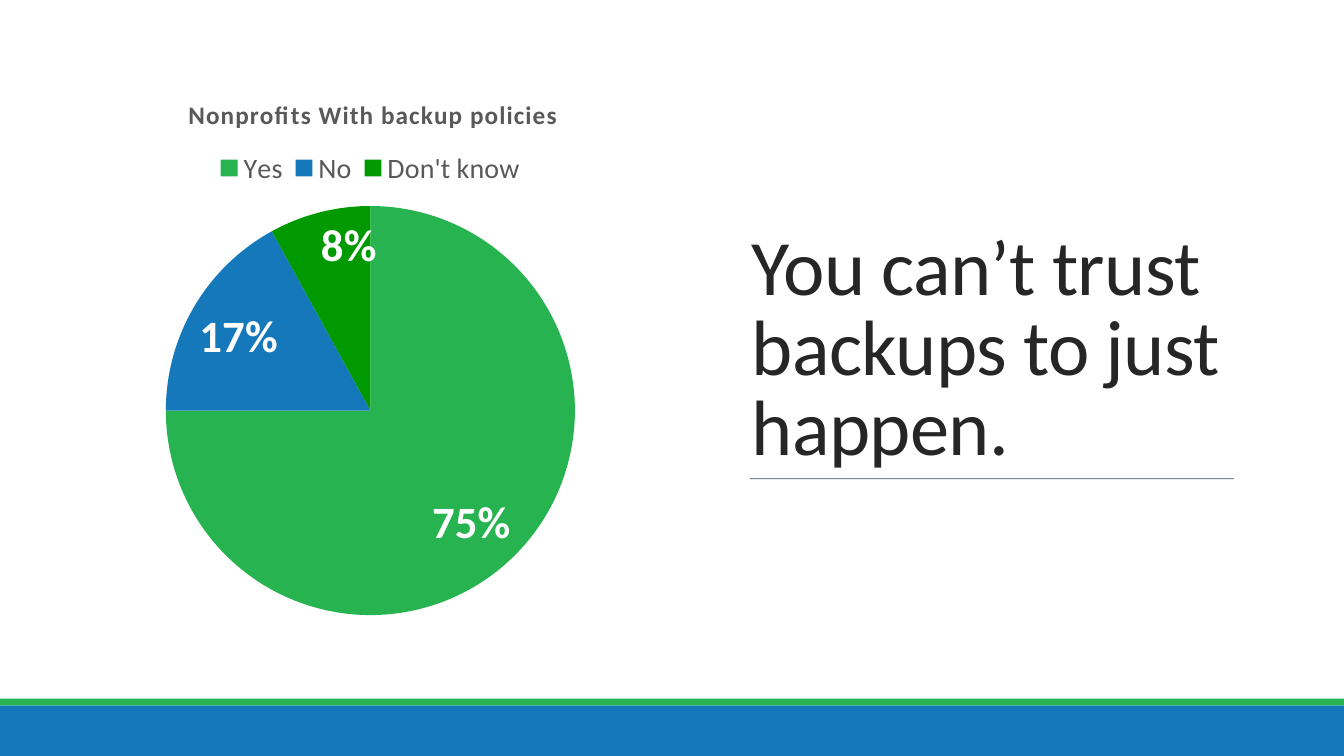
"""Build the slide on nonprofit backup policies: a pie chart beside a statement."""
from lxml import etree
from pptx import Presentation
from pptx import util as u
from pptx.chart import data
from pptx.dml.color import RGBColor
from pptx.enum import chart as ch, shapes, text
from pptx.oxml import ns

WHITE = RGBColor(0xFF, 0xFF, 0xFF)
GREEN = RGBColor(0x27, 0xB3, 0x50)
BLUE = RGBColor(0x15, 0x78, 0xBB)
DARK_GREEN = RGBColor(0x00, 0x99, 0x00)
INK = RGBColor(0x26, 0x26, 0x26)
GREY = RGBColor(0x59, 0x59, 0x59)
RULE = RGBColor(0x2C, 0x3C, 0x43)
FONT = "Calibri"
WIDTH, HEIGHT = 960, 540

STATEMENT = "You can’t trust backups to just happen."
CHART_TITLE = "Nonprofits With backup policies"
ANSWERS = [("Yes", 75, GREEN), ("No", 17, BLUE), ("Don't know", 8, DARK_GREEN)]
BANDS = [(499, WHITE), (5, GREEN), (36, BLUE)]
TITLE_AT = {"x": 0.19, "y": 0.04}
LEGEND_AT = {"x": 0.23, "y": 0.14, "w": 0.54, "h": 0.07}
PIE_AT = {"x": 0.16, "y": 0.24, "w": 0.68, "h": 0.74}


def style(font, size, color, bold=False):
    font.name, font.size, font.bold = FONT, u.Pt(size), bold
    font.color.rgb = color


def place(element, after, inner=False, **box):
    for old in element.findall(ns.qn("c:layout")):
        element.remove(old)
    layout = etree.Element(ns.qn("c:layout"))
    manual = etree.SubElement(layout, ns.qn("c:manualLayout"))
    entries = [("layoutTarget", "inner")] if inner else []
    entries += [(f"{k}Mode", "edge") for k in "xy"] + list(box.items())
    for name, value in entries:
        etree.SubElement(manual, ns.qn(f"c:{name}")).set("val", str(value))
    if after is None:
        element.insert(0, layout)
    else:
        element.find(ns.qn(after)).addnext(layout)


def add_bands(s):
    top = 0
    for height, color in BANDS:
        sp = s.shapes.add_shape(shapes.MSO_SHAPE.RECTANGLE, 0, u.Pt(top),
                                u.Pt(WIDTH), u.Pt(height))
        sp.shadow.inherit = False
        sp.fill.solid()
        sp.fill.fore_color.rgb = color
        sp.line.fill.background()
        top += height


def add_statement(s):
    sp = s.shapes.add_textbox(u.Pt(530), u.Pt(50.4), u.Pt(378.7), u.Pt(290))
    tf = sp.text_frame
    tf.word_wrap = True
    tf.vertical_anchor = text.MSO_ANCHOR.BOTTOM
    tf.text = STATEMENT
    p = tf.paragraphs[0]
    p.line_spacing = 0.85
    r = p.runs[0]
    style(r.font, 56, INK)
    r.font._element.set("spc", "-50")

    line = s.shapes.add_connector(shapes.MSO_CONNECTOR.STRAIGHT, u.Pt(535.7),
                                  u.Pt(342), u.Pt(881.3), u.Pt(342))
    line.line.width = u.Pt(0.5)
    line.line.color.rgb = RULE
    sp_pr = line._element.spPr
    color = sp_pr.find(".//" + ns.qn("a:srgbClr"))
    etree.SubElement(color, ns.qn("a:alpha")).set("val", "90000")
    etree.SubElement(sp_pr, ns.qn("a:effectLst"))


def add_pie(s):
    cd = data.CategoryChartData()
    cd.categories = [name for name, _, _ in ANSWERS]
    cd.add_series("Series 1", [value for _, value, _ in ANSWERS])
    chart = s.shapes.add_chart(ch.XL_CHART_TYPE.PIE, u.Pt(49.7), u.Pt(50.4),
                               u.Pt(429.8), u.Pt(398.2), cd).chart
    style(chart.font, 10, RGBColor(0, 0, 0))

    chart.has_title = True
    title = chart.chart_title
    title.text_frame.text = CHART_TITLE
    r = title.text_frame.paragraphs[0].runs[0]
    style(r.font, 18, GREY, True)
    r.font._element.set("spc", "80")
    title.include_in_layout = False
    place(title._element, "c:tx", **TITLE_AT)

    chart.has_legend = True
    legend = chart.legend
    legend.position = ch.XL_LEGEND_POSITION.TOP
    legend.include_in_layout = False
    style(legend.font, 20, GREY)
    place(legend._element, "c:legendPos", **LEGEND_AT)

    plot = chart.plots[0]
    plot.vary_by_categories = True
    place(plot._element.getparent(), None, True, **PIE_AT)
    series = plot.series[0]
    for i, (_, _, color) in enumerate(ANSWERS):
        fill = series.points[i].format.fill
        fill.solid()
        fill.fore_color.rgb = color
    labels = series.data_labels
    labels.show_value = False
    labels.show_percentage = True
    labels.number_format = "0%"
    labels.number_format_is_linked = False
    labels.position = ch.XL_LABEL_POSITION.INSIDE_END
    style(labels.font, 32, WHITE, True)


def main():
    prs = Presentation()
    prs.slide_width, prs.slide_height = u.Pt(WIDTH), u.Pt(HEIGHT)
    s = prs.slides.add_slide(prs.slide_layouts[6])
    add_bands(s)
    add_statement(s)
    add_pie(s)
    prs.save("out.pptx")


if __name__ == "__main__":
    main()
